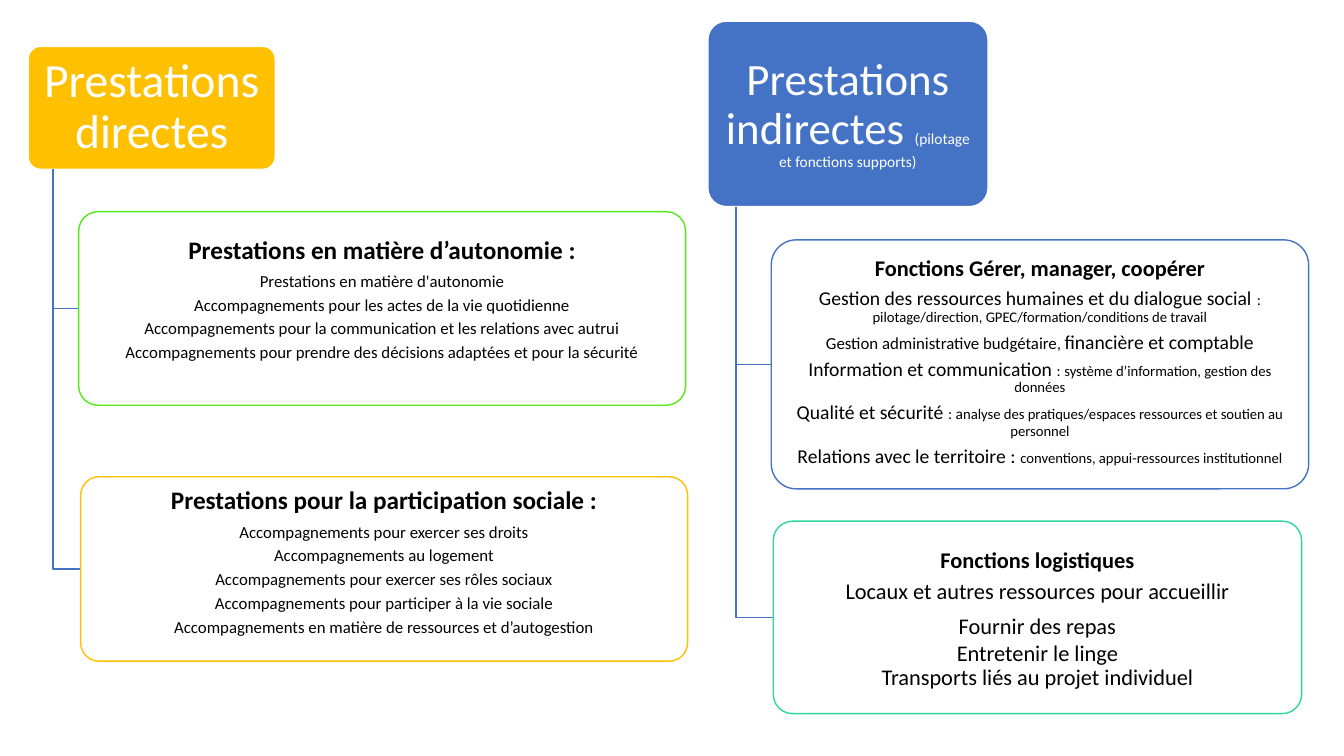
import pptx
import pptx.util
import pptx.dml.color
import pptx.enum.shapes
import pptx.enum.text
import pptx.oxml.ns
import lxml.etree
import dataclasses

Inches = pptx.util.Inches
Pt = pptx.util.Pt


# Colours and type sizes
@dataclasses.dataclass(frozen=True)
class Theme:
    font: str = "Calibri"
    white: str = "FFFFFF"
    black: str = "000000"
    gold: str = "FFC000"
    blue: str = "4472C4"
    lime: str = "53EB17"
    teal: str = "2ED7A1"
    head: float = 34
    sub: float = 32
    title: float = 18
    name: float = 16
    topic: float = 14
    item: float = 12
    note: float = 11
    fine: float = 10.5
    line: float = 1
    gap: float = 0.33
    lead: float = 0.9


T = Theme()


def tint(code):
    return pptx.dml.color.RGBColor.from_string(code)


def write(frame, runs, first=False, color=T.black, bold=False,
          lead=T.lead, gap=T.gap):
    """Add one centred paragraph made of (text, size) runs."""
    para = frame.paragraphs[0] if first else frame.add_paragraph()
    para.alignment = pptx.enum.text.PP_ALIGN.CENTER
    para.line_spacing = lead
    para.space_after = Pt(round(gap * runs[0][1], 1))
    for text, size in runs:
        run = para.add_run()
        run.text = text
        run.font.name = T.font
        run.font.size = Pt(size)
        run.font.bold = bold
        run.font.color.rgb = tint(color)


def card(slide, box, fill, line, inset=0.03, top=None, alpha=None):
    """Draw a rounded box and return its text frame."""
    shape = slide.shapes.add_shape(
        pptx.enum.shapes.MSO_SHAPE.ROUNDED_RECTANGLE, *map(Inches, box))
    shape.shadow.inherit = False
    shape.adjustments[0] = 0.1
    shape.fill.solid()
    shape.fill.fore_color.rgb = tint(fill)
    if alpha:
        ns = pptx.oxml.ns.qn
        shade = shape.fill._xPr.find(ns("a:solidFill"))[0]
        lxml.etree.SubElement(shade, ns("a:alpha")).set("val", str(alpha * 1000))
    shape.line.color.rgb = tint(line)
    shape.line.width = Pt(T.line)
    frame = shape.text_frame
    frame.word_wrap = True
    frame.margin_left = frame.margin_right = Inches(inset)
    frame.margin_top = Inches(inset if top is None else top)
    frame.margin_bottom = Inches(inset)
    anchor = pptx.enum.text.MSO_ANCHOR
    frame.vertical_anchor = anchor.MIDDLE if top is None else anchor.TOP
    return frame


def elbow(slide, x, y, right, low):
    """Draw a line down, then right."""
    build = slide.shapes.build_freeform(Inches(x), Inches(y))
    build.add_line_segments(
        [(Inches(x), Inches(low)), (Inches(right), Inches(low))], close=False)
    shape = build.convert_to_shape()
    shape.shadow.inherit = False
    shape.fill.background()
    shape.line.color.rgb = tint(T.blue)
    shape.line.width = Pt(T.line)


def panel(slide, box, color, top, title, size, rows):
    """Draw a white box with a bold title and its rows."""
    frame = card(slide, box, T.white, color, top=top, alpha=90)
    write(frame, [(title, size)], first=True, bold=True)
    for runs, style in rows:
        write(frame, runs, **style)


def branch(slide, box, color, runs, panels):
    """Draw a header and the panels that hang from it."""
    left, top, width, height = box
    frame = card(slide, box, color, T.white, inset=0.07)
    write(frame, runs, first=True, color=T.white)
    for place, *rest in panels:
        px, py, pw, ph = place
        elbow(slide, left + width / 10, top + height, px, py + ph / 2)
        panel(slide, place, *rest)


def plain(*texts):
    return [([(text, T.item)], {}) for text in texts]


def direct(slide):
    """Left half."""
    branch(slide, (0.28, 0.46, 2.45, 1.22), T.gold,
           [("Prestations directes", T.head)], [
        ((0.8, 4.73, 6.02, 1.83), T.gold, 0.06,
         "Prestations pour la participation sociale :", T.title, plain(
             "Accompagnements pour exercer ses droits",
             "Accompagnements au logement",
             "Accompagnements pour exercer ses rôles sociaux",
             "Accompagnements pour participer à la vie sociale",
             "Accompagnements en matière de ressources et d’autogestion")),
        ((0.78, 2.1, 6.02, 1.92), T.lime, 0.2,
         "Prestations en matière d’autonomie :", T.title, plain(
             "Prestations en matière d'autonomie",
             "Accompagnements pour les actes de la vie quotidienne",
             "Accompagnements pour la communication et les relations avec autrui",
             "Accompagnements pour prendre des décisions adaptées et pour la sécurité")),
    ])


def support(slide):
    """Right half."""
    tight = {"lead": 1, "gap": 0}
    branch(slide, (7.02, 0.21, 2.78, 1.84), T.blue,
           [("Prestations indirectes ", T.sub),
            ("(pilotage et fonctions supports)", T.note)], [
        ((7.67, 5.17, 5.24, 1.91), T.teal, 0.22,
         "Fonctions logistiques", T.name, [
             ([("Locaux et autres ressources pour accueillir", T.name)], {}),
             ([("Fournir des repas", T.name)], tight),
             ([("Entretenir le linge", T.name)], tight),
             ([("Transports liés au projet individuel", T.name)], {})]),
        ((7.65, 2.38, 5.33, 2.47), T.blue, 0.1,
         "Fonctions Gérer, manager, coopérer", T.name, [
             ([("Gestion des ressources humaines et du dialogue social ", T.topic),
               (": ", T.note),
               ("pilotage/direction, GPEC/formation/conditions de travail", T.fine)], {}),
             ([("Gestion administrative budgétaire", T.item), (", ", T.note),
               ("financière et comptable", T.topic)], {}),
             ([("Information et communication ", T.topic), (": ", T.note),
               ("système d’information, gestion des données", T.fine)], {}),
             ([("Qualité et sécurité ", T.topic), (": a", T.note),
               ("nalyse des pratiques/espaces ressources et soutien au personnel",
                T.fine)], {}),
             ([("Relations avec le territoire : ", T.topic),
               ("conventions, appui-ressources institutionnel", T.fine)], {})]),
    ])


def main():
    deck = pptx.Presentation()
    deck.slide_width = Inches(13.33)
    deck.slide_height = Inches(7.5)
    slide = deck.slides.add_slide(deck.slide_layouts[6])
    direct(slide)
    support(slide)
    deck.save("out.pptx")


if __name__ == "__main__":
    main()
